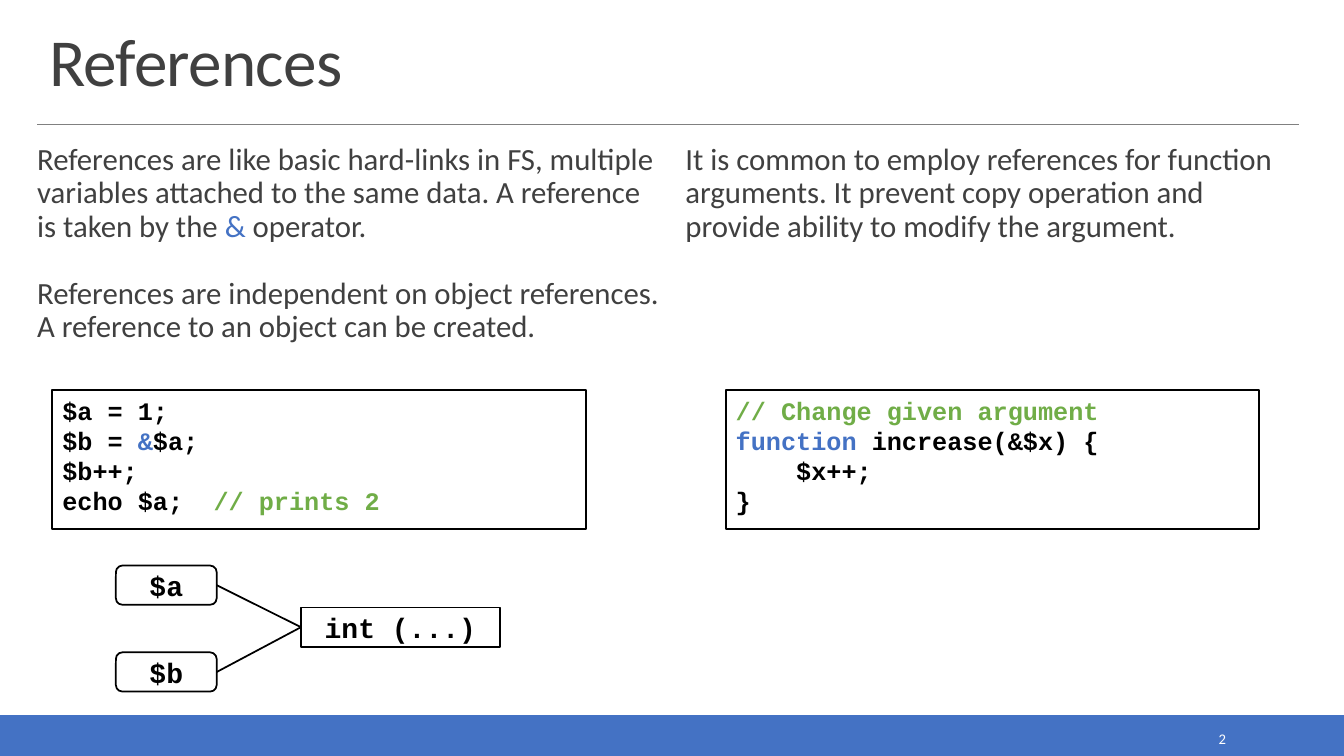
"""Build the slide that explains references."""
from lxml import etree
from pptx import Presentation
from pptx.dml.color import RGBColor
from pptx.enum.shapes import MSO_CONNECTOR, MSO_SHAPE
from pptx.enum.text import MSO_ANCHOR, MSO_AUTO_SIZE, PP_ALIGN
from pptx.oxml.ns import qn
from pptx.util import Pt

RECT, ROUNDED = MSO_SHAPE.RECTANGLE, MSO_SHAPE.ROUNDED_RECTANGLE
STRAIGHT = MSO_CONNECTOR.STRAIGHT
TOP, MIDDLE, BOTTOM = MSO_ANCHOR.TOP, MSO_ANCHOR.MIDDLE, MSO_ANCHOR.BOTTOM
LEFT, CENTER, RIGHT = PP_ALIGN.LEFT, PP_ALIGN.CENTER, PP_ALIGN.RIGHT
FIXED_SIZE = MSO_AUTO_SIZE.NONE

BLACK = RGBColor(0x00, 0x00, 0x00)
WHITE = RGBColor(0xFF, 0xFF, 0xFF)
DARK = RGBColor(0x40, 0x40, 0x40)
GRAY = RGBColor(0x80, 0x80, 0x80)
BLUE = RGBColor(0x44, 0x72, 0xC4)
GREEN = RGBColor(0x70, 0xAD, 0x47)
SANS, MONO = "Calibri", "Courier New"

BODY_TOP, CODE_TOP = 99.4, 278.6
RIGHT_SITE, LEFT_SITE = 3, 1

REFERENCE_NOTES = [
    [("References are like basic hard-links in FS, multiple variables attached "
      "to the same data. A reference is taken by the ", DARK),
     ("&", BLUE), (" operator.", DARK)],
    [("References are independent on object references.", DARK)],
    [("A reference to an object can be created.", DARK)],
]
ARGUMENT_NOTES = [
    [("It is common to employ references for function arguments. It prevent "
      "copy operation and provide ability to modify the argument.", DARK)],
]
REFERENCE_CODE = [
    [("$a = 1;", BLACK)],
    [("$b = ", BLACK), ("&", BLUE), ("$a;", BLACK)],
    [("$b++;", BLACK)],
    [("echo $a;  ", BLACK), ("// prints 2", GREEN)],
]
ARGUMENT_CODE = [
    [("// Change given argument", GREEN)],
    [("function", BLUE), (" increase(&$x) {", BLACK)],
    [("    $x++;", BLACK)],
    [("}", BLACK)],
]


def write_lines(frame, lines, font, size, bold=False, align=LEFT, anchor=TOP):
    """Fill a text frame with paragraphs made of (text, colour) parts."""
    frame.word_wrap = True
    frame.auto_size = FIXED_SIZE
    frame.vertical_anchor = anchor
    for index, parts in enumerate(lines):
        paragraph = frame.paragraphs[0] if index == 0 else frame.add_paragraph()
        paragraph.alignment = align
        for text, color in parts:
            run = paragraph.add_run()
            run.text = text
            run.font.name, run.font.size, run.font.bold = font, Pt(size), bold
            run.font.color.rgb = color


def add_title(slide, text):
    """Place and format the title placeholder."""
    title = slide.shapes.title
    title.left, title.top, title.width, title.height = Pt(28), Pt(14.4), Pt(901.4), Pt(60.5)
    write_lines(title.text_frame, [[(text, DARK)]], SANS, 48, anchor=BOTTOM)
    paragraph = title.text_frame.paragraphs[0]
    paragraph.line_spacing = 0.85
    paragraph.runs[0].font._element.set("spc", "-50")


def add_notes(slide, left, width, lines):
    """Add a column of body text and return its paragraphs."""
    notes = slide.shapes.add_textbox(Pt(left), Pt(BODY_TOP), Pt(width), Pt(154))
    frame = notes.text_frame
    frame.margin_left = frame.margin_right = 0
    write_lines(frame, lines, SANS, 22)
    for paragraph in frame.paragraphs:
        paragraph.line_spacing = 0.9
    return frame.paragraphs


def add_box(slide, kind, left, top, width, height, fill=None, line=BLACK):
    """Add a flat outlined shape."""
    box = slide.shapes.add_shape(kind, Pt(left), Pt(top), Pt(width), Pt(height))
    box.shadow.inherit = False
    if fill is None:
        box.fill.background()
    else:
        box.fill.solid()
        box.fill.fore_color.rgb = fill
    box.line.color.rgb = line
    box.line.width = Pt(1.25)
    return box


def add_code(slide, left, lines):
    """Add a framed code listing."""
    listing = add_box(slide, RECT, left, CODE_TOP, 381, 99.4)
    write_lines(listing.text_frame, lines, MONO, 18, bold=True)


def add_node(slide, kind, left, top, width, label):
    """Add a labelled node of the reference diagram."""
    node = add_box(slide, kind, left, top, width, 28, WHITE)
    write_lines(node.text_frame, [[(label, BLACK)]], MONO, 20, True, CENTER, MIDDLE)
    return node


def add_line(slide, start, end, color, width):
    """Add a straight line without a shadow."""
    line = slide.shapes.add_connector(STRAIGHT, *(Pt(v) for v in start + end))
    line.line.color.rgb = color
    line.line.width = Pt(width)
    etree.SubElement(line._element.spPr, qn("a:effectLst"))
    return line


def add_diagram(slide):
    """Draw two variables that share one value."""
    value = add_node(slide, RECT, 215, 434, 142, "int (...)")
    for label, top in (("$a", 404), ("$b", 466)):
        variable = add_node(slide, ROUNDED, 82.8, top, 72, label)
        link = add_line(slide, (154.8, top + 14), (215, 448), BLACK, 1.25)
        link.begin_connect(variable, RIGHT_SITE)
        link.end_connect(value, LEFT_SITE)


def add_page_number(slide, number):
    """Add the page number on the footer band."""
    page = slide.shapes.add_textbox(Pt(779.8), Pt(517.7), Pt(103), Pt(20.2))
    write_lines(page.text_frame, [[(number, WHITE)]], SANS, 10.5, False, RIGHT, MIDDLE)


def main():
    """Build and save the slide."""
    deck = Presentation()
    deck.slide_width, deck.slide_height = Pt(960), Pt(540)
    slide = deck.slides.add_slide(deck.slide_layouts[5])
    add_box(slide, RECT, 0, 511.2, 960, 28.8, BLUE, BLUE)
    add_line(slide, (26.6, 88.6), (928, 88.6), GRAY, 0.5)
    add_title(slide, "References")
    reference_notes = add_notes(slide, 26.6, 448.6, REFERENCE_NOTES)
    reference_notes[1].space_before = Pt(24)
    add_notes(slide, 489.6, 438.5, ARGUMENT_NOTES)
    add_code(slide, 37.4, REFERENCE_CODE)
    add_code(slide, 518.4, ARGUMENT_CODE)
    add_diagram(slide)
    add_page_number(slide, "2")
    deck.save("out.pptx")


if __name__ == "__main__":
    main()
